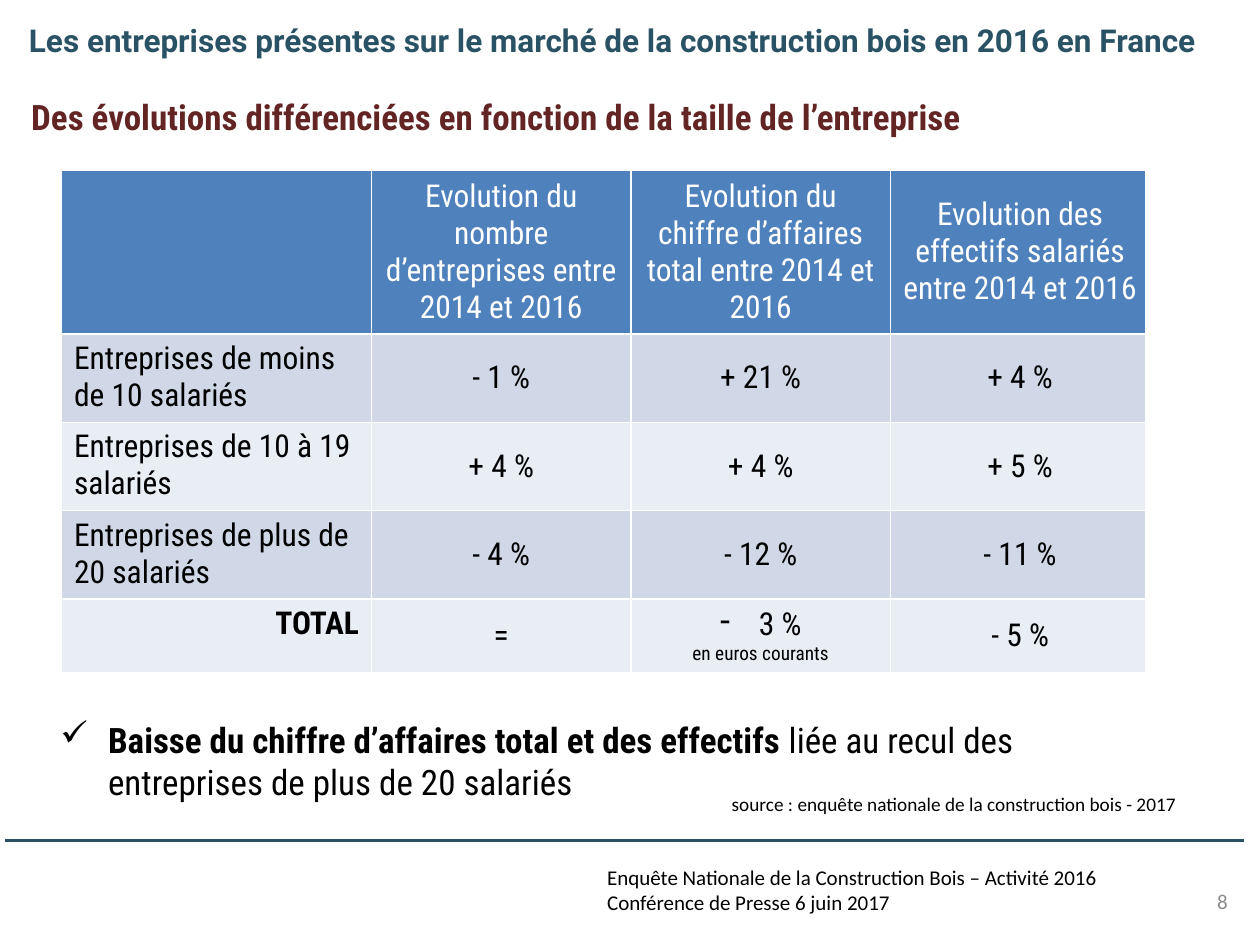
from dataclasses import dataclass

from lxml.etree import SubElement
from pptx import Presentation
from pptx.dml.color import RGBColor as Rgb
from pptx.enum.shapes import MSO_CONNECTOR as Link
from pptx.enum.text import MSO_ANCHOR as Anchor, MSO_AUTO_SIZE as Auto, PP_ALIGN as Align
from pptx.oxml import parse_xml
from pptx.oxml.ns import nsdecls, qn
from pptx.util import Cm, Pt


@dataclass(frozen=True)
class Theme:
    """Colours, fonts and type sizes of the slide."""
    teal: str = "2A5265"
    wine: str = "632523"
    blue: str = "4F81BD"
    bands: tuple = ("D0D8E8", "E9EDF4")
    black: str = "000000"
    white: str = "FFFFFF"
    grey: str = "8C8C8C"
    head: str = "Roboto"
    body: str = "Roboto Condensed"
    foot: str = "Calibri"
    big: int = 20
    mid: int = 18
    small: int = 12
    tiny: int = 11


THEME = Theme()
ROWS = [
    ["", "Evolution du nombre d’entreprises entre 2014 et 2016",
     "Evolution du chiffre d’affaires total entre 2014 et 2016",
     "Evolution des effectifs salariés entre 2014 et 2016"],
    ["Entreprises de moins de 10 salariés", "- 1 %", "+ 21 %", "+ 4 %"],
    ["Entreprises de 10 à 19 salariés", "+ 4 %", "+ 4 %", "+ 5 %"],
    ["Entreprises de plus de 20 salariés", "- 4 %", "- 12 %", "- 11 %"],
    ["TOTAL", "=", "3 %", "- 5 %"],
]
WIDTHS = [6.25, 5.23, 5.23, 5.23]
HEIGHTS = [3.3, 1.78, 1.78, 1.78, 1.48]


def write(para, text, size=THEME.mid, font=THEME.body, color=THEME.black,
          bold=False, align=Align.LEFT):
    """Add a formatted run to a paragraph."""
    para.alignment = align
    run = para.add_run()
    run.text = text
    run.font.size = Pt(size)
    run.font.name = font
    run.font.bold = bold
    run.font.color.rgb = Rgb.from_string(color)


def bullet(para, sign, left, hang):
    """Give a paragraph a hanging bullet sign."""
    props = para._p.get_or_add_pPr()
    props.set("marL", str(Cm(left)))
    props.set("indent", str(-Cm(hang)))
    SubElement(props, qn("a:buChar")).set("char", sign)


def place(shape, left, top, width, height):
    """Set the position and size of a shape."""
    shape.left, shape.top = Cm(left), Cm(top)
    shape.width, shape.height = Cm(width), Cm(height)


def title(slide, text):
    """Format and fill the title placeholder."""
    shape = slide.shapes.title
    place(shape, 0.33, 0.41, 26.52, 0.79)
    frame = shape.text_frame
    frame.auto_size = Auto.NONE
    frame.vertical_anchor = Anchor.MIDDLE
    write(frame.paragraphs[0], text, font=THEME.head, color=THEME.teal, bold=True)


def box(slide, spot, lines=(), anchor=Anchor.TOP, wrap=True, **style):
    """Add a text box and return its frame."""
    frame = slide.shapes.add_textbox(*map(Cm, spot)).text_frame
    frame.word_wrap = wrap
    frame.vertical_anchor = anchor
    for i, line in enumerate(lines):
        para = frame.add_paragraph() if i else frame.paragraphs[0]
        write(para, line, **style)
    return frame


def rule(slide, left, right, top):
    """Draw the line above the footer."""
    line = slide.shapes.add_connector(
        Link.STRAIGHT, Cm(left), Cm(top), Cm(right), Cm(top))
    line.line.color.rgb = Rgb.from_string(THEME.teal)
    line.line.width = Pt(1.5)
    SubElement(line._element.spPr, qn("a:effectLst"))


def border(cell, last):
    """Draw white borders, with a thick right edge on the last column."""
    sides = {"L": 1, "R": 6 if last else 1, "T": 1, "B": 1}
    for i, (side, width) in enumerate(sides.items()):
        edge = parse_xml(
            f'<a:ln{side} {nsdecls("a")} w="{Pt(width)}"><a:solidFill>'
            f'<a:srgbClr val="{THEME.white}"/></a:solidFill></a:ln{side}>')
        cell._tc.get_or_add_tcPr().insert(i, edge)


def fill(cell, row, col, text):
    """Fill and format one table cell."""
    head, total = row == 0, row == len(ROWS) - 1
    cell.fill.solid()
    cell.fill.fore_color.rgb = Rgb.from_string(
        THEME.blue if head else THEME.bands[(row - 1) % 2])
    border(cell, col == len(WIDTHS) - 1)
    cell.vertical_anchor = Anchor.MIDDLE if col else Anchor.TOP
    para = cell.text_frame.paragraphs[0]
    if total and col == 2:
        bullet(para, "-", 0.79, 0.79)
        note = cell.text_frame.add_paragraph()
        write(note, "en euros courants", size=THEME.tiny, align=Align.CENTER)
    side = Align.CENTER if col else Align.RIGHT if total else Align.LEFT
    if text:
        write(para, text, color=THEME.white if head else THEME.black,
              bold=total and col == 0, align=side)


def grid(slide):
    """Add the table of changes by company size."""
    table = slide.shapes.add_table(
        len(ROWS), len(WIDTHS), Cm(1.24), Cm(3.43),
        Cm(sum(WIDTHS)), Cm(sum(HEIGHTS))).table
    for col, width in zip(table.columns, WIDTHS):
        col.width = Cm(width)
    for row, height in zip(table.rows, HEIGHTS):
        row.height = Cm(height)
    for r, texts in enumerate(ROWS):
        for c, text in enumerate(texts):
            fill(table.cell(r, c), r, c, text)


def finding(slide):
    """Add the ticked conclusion below the table."""
    para = box(slide, (-1.57, 14.35, 24.71, 1.96)).paragraphs[0]
    para.level = 2
    bullet(para, "✓", 3.5, 0.96)
    write(para, "Baisse du chiffre d’affaires total et des effectifs ",
          size=THEME.big, bold=True)
    write(para, "liée au recul des entreprises de plus de 20 salariés",
          size=THEME.big)


def main():
    """Build and save the slide."""
    deck = Presentation()
    deck.slide_width, deck.slide_height = Cm(25.4), Cm(19.05)
    slide = deck.slides.add_slide(deck.slide_layouts[5])
    title(slide, "Les entreprises présentes sur le marché de la construction "
                 "bois en 2016 en France")
    rule(slide, 0.1, 25.07, 16.94)
    box(slide, (14.5, 15.85, 10.49, 0.74),
        ["source : enquête nationale de la construction bois - 2017"],
        size=THEME.tiny, font=THEME.foot)
    box(slide, (11.99, 17.3, 10.52, 1.27),
        ["Enquête Nationale de la Construction Bois – Activité 2016",
         "Conférence de Presse 6 juin 2017"],
        wrap=False, size=THEME.small, font=THEME.foot)
    box(slide, (19.08, 17.65, 5.92, 1.02), ["8"], anchor=Anchor.MIDDLE,
        size=THEME.small, font=THEME.foot, color=THEME.grey, align=Align.RIGHT)
    box(slide, (0.38, 1.8, 20.12, 1.12),
        ["Des évolutions différenciées en fonction de la taille de l’entreprise"],
        size=THEME.big, color=THEME.wine, bold=True)
    grid(slide)
    finding(slide)
    deck.save("out.pptx")


if __name__ == "__main__":
    main()
